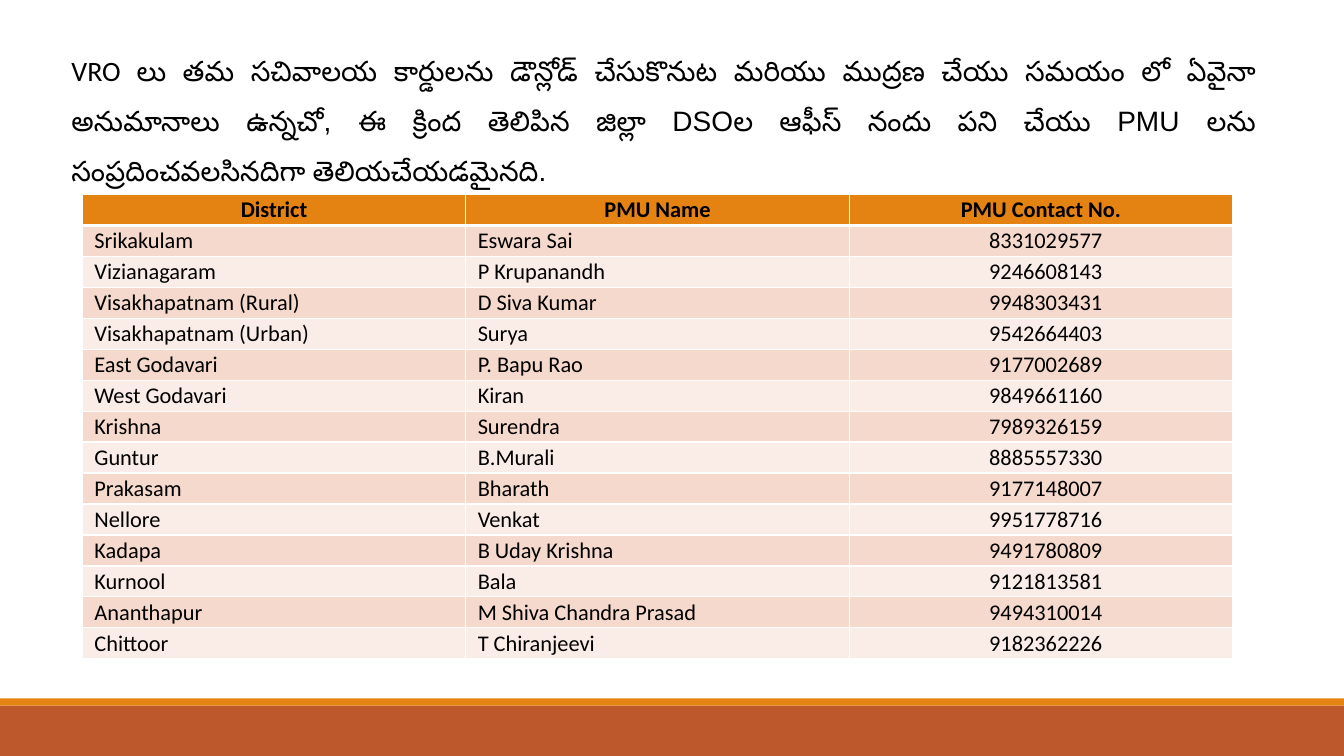
from lxml import etree
from pptx import Presentation
from pptx.dml.color import RGBColor
from pptx.enum.shapes import MSO_SHAPE
from pptx.enum.text import MSO_ANCHOR, PP_ALIGN
from pptx.oxml.ns import qn
from pptx.util import Cm, Pt

RECT = MSO_SHAPE.RECTANGLE
MIDDLE = MSO_ANCHOR.MIDDLE
LEFT, CENTER, JUSTIFY = PP_ALIGN.LEFT, PP_ALIGN.CENTER, PP_ALIGN.JUSTIFY

COLORS = {
    "text": "000000",
    "border": "FFFFFF",
    "header": "E48312",
    "odd_row": "F5D9CC",
    "even_row": "FAEDE7",
    "stripe": "E48312",
    "band": "BD582C",
}

NOTICE = [
    ("VRO లు తమ సచివాలయ కార్డులను డౌన్లోడ్ చేసుకొనుట మరియు ముద్రణ చేయు సమయం లో", "Calibri"),
    (" ఏవైనా అనుమానాలు ఉన్నచో, ఈ క్రింద తెలిపిన జిల్లా DSOల ఆఫీస్ నందు పని చేయు PMU లను "
     "సంప్రదించవలసినదిగా తెలియచేయడమైనది. ", "Arial"),
]

CONTACTS = [
    ("District", "PMU Name", "PMU Contact No."),
    ("Srikakulam", "Eswara Sai", "8331029577"),
    ("Vizianagaram", "P Krupanandh", "9246608143"),
    ("Visakhapatnam (Rural)", "D Siva Kumar", "9948303431"),
    ("Visakhapatnam (Urban)", "Surya", "9542664403"),
    ("East Godavari", "P. Bapu Rao", "9177002689"),
    ("West Godavari", "Kiran", "9849661160"),
    ("Krishna", "Surendra", "7989326159"),
    ("Guntur", "B.Murali", "8885557330"),
    ("Prakasam", "Bharath", "9177148007"),
    ("Nellore", "Venkat", "9951778716"),
    ("Kadapa", "B Uday Krishna", "9491780809"),
    ("Kurnool", "Bala", "9121813581"),
    ("Ananthapur", "M Shiva Chandra Prasad", "9494310014"),
    ("Chittoor", "T Chiranjeevi", "9182362226"),
]


def rgb(name):
    return RGBColor.from_string(COLORS[name])


def set_attrs(obj, values):
    for name, value in values.items():
        setattr(obj, name, value)


def add_run(p, text, font="Calibri", size=16, bold=False):
    r = p.add_run()
    r.text = text
    set_attrs(r.font, {"name": font, "size": Pt(size), "bold": bold})
    r.font.color.rgb = rgb("text")


def add_footer(s, left, top, width, height):
    """Draw a thin stripe above a solid band, filling the box."""
    stripe = Cm(0.18)
    bars = [("band", top + stripe, height - stripe), ("stripe", top, stripe)]
    for color, y, bar_height in bars:
        sp = s.shapes.add_shape(RECT, left, y, width, bar_height)
        sp.shadow.inherit = False
        sp.fill.solid()
        sp.fill.fore_color.rgb = rgb(color)
        sp.line.fill.background()


def add_notice(s, left, top, width, height):
    tf = s.shapes.add_textbox(left, top, width, height).text_frame
    tf.word_wrap = True
    p = tf.paragraphs[0]
    set_attrs(p, {"alignment": JUSTIFY, "line_spacing": 1.5})
    for text, font in NOTICE:
        add_run(p, text, font, 20)


def set_borders(cell, widths):
    """Add border lines, in points, keyed by side in schema order L, R, T, B."""
    tc_pr = cell._tc.get_or_add_tcPr()
    for side, width in widths.items():
        ln = etree.SubElement(tc_pr, qn(f"a:ln{side}"), w=str(Pt(width)))
        fill = etree.SubElement(ln, qn("a:solidFill"))
        etree.SubElement(fill, qn("a:srgbClr"), val=COLORS["border"])


def format_cell(cell, text, row, col):
    is_header = row == 0
    set_attrs(cell, {
        "vertical_anchor": MIDDLE,
        "margin_left": Cm(0.05),
        "margin_right": Cm(0.05),
        "margin_top": Cm(0.05),
        "margin_bottom": Cm(0.05),
    })
    set_borders(cell, {"L": 1, "R": 1, "T": 3 if row == 1 else 1, "B": 3 if is_header else 1})
    cell.fill.solid()
    cell.fill.fore_color.rgb = rgb("header" if is_header else "odd_row" if row % 2 else "even_row")
    p = cell.text_frame.paragraphs[0]
    p.alignment = CENTER if is_header or col == 2 else LEFT
    if not is_header:
        p._p.get_or_add_pPr().set("indent", str(Cm(0.25)))
    add_run(p, text, bold=is_header)


def add_contacts(s, left, top, width, height):
    rows, cols = len(CONTACTS), len(CONTACTS[0])
    table = s.shapes.add_table(rows, cols, left, top, width, height).table
    for row, record in enumerate(CONTACTS):
        for col, text in enumerate(record):
            format_cell(table.cell(row, col), text, row, col)


def main():
    prs = Presentation()
    set_attrs(prs, {"slide_width": Cm(33.87), "slide_height": Cm(19.05)})
    s = prs.slides.add_slide(prs.slide_layouts[6])
    add_footer(s, 0, Cm(17.6), prs.slide_width, Cm(1.45))
    add_notice(s, Cm(1.55), Cm(0.79), Cm(30.35), Cm(4.11))
    add_contacts(s, Cm(2.08), Cm(4.9), Cm(28.98), Cm(11.7))
    prs.save("out.pptx")


if __name__ == "__main__":
    main()
